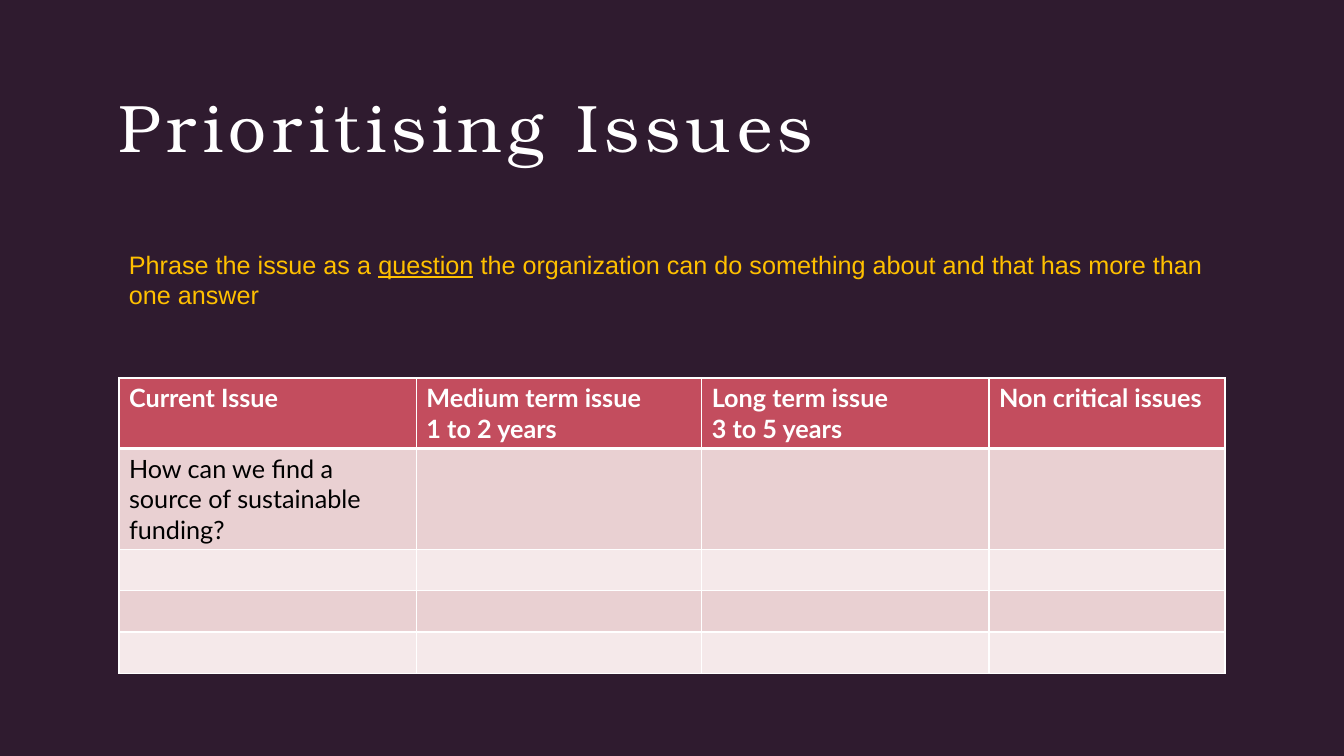
from dataclasses import dataclass

from lxml import etree
from pptx import Presentation
from pptx.dml.color import RGBColor
from pptx.enum.text import MSO_ANCHOR, MSO_AUTO_SIZE, PP_ALIGN
from pptx.oxml.ns import qn
from pptx.util import Inches, Pt

MIDDLE = MSO_ANCHOR.MIDDLE
LEFT_ALIGNED = PP_ALIGN.LEFT
NO_AUTOFIT = MSO_AUTO_SIZE.NONE
GROW = MSO_AUTO_SIZE.SHAPE_TO_FIT_TEXT


@dataclass(frozen=True)
class Theme:
    background: str = "2F1B2F"
    white: str = "FFFFFF"
    black: str = "000000"
    gold: str = "FFC000"
    header: str = "C34D5E"
    bands: tuple = ("E9D0D2", "F5E9EA")
    title_font: str = "TeX Gyre Bonum"
    prompt_font: str = "Arial"
    table_font: str = "Lato"
    title_size: int = 48
    text_size: int = 18


theme = Theme()


def add_text(para, text, *, font, size, color, bold=False, underline=False, spacing=0):
    """Add a formatted run to para; spacing is the letter spacing in points."""
    para.alignment = LEFT_ALIGNED
    span = para.add_run()
    span.text = text
    span.font.name = font
    span.font.size = Pt(size)
    span.font.color.rgb = RGBColor.from_string(color)
    span.font.bold = bold
    span.font.underline = underline
    if spacing:
        span.font._element.set("spc", str(spacing * 100))


def set_borders(cell, color, bottom_width):
    """Draw 1 pt borders round a cell, with its own width at the bottom."""
    properties = cell._tc.get_or_add_tcPr()
    widths = {"a:lnL": 1, "a:lnR": 1, "a:lnT": 1, "a:lnB": bottom_width}
    for position, (side, width) in enumerate(widths.items()):
        line = etree.Element(qn(side), w=str(Pt(width)))
        fill = etree.SubElement(line, qn("a:solidFill"))
        etree.SubElement(fill, qn("a:srgbClr"), val=color)
        properties.insert(position, line)


deck = Presentation()
deck.slide_width, deck.slide_height = Inches(13.33), Inches(7.5)
page = deck.slides.add_slide(deck.slide_layouts.get_by_name("Title Only"))
page.background.fill.solid()
page.background.fill.fore_color.rgb = RGBColor.from_string(theme.background)

left, width = Inches(1.18), Inches(10.97)

# Title
title = page.shapes.title
title.left, title.top, title.width, title.height = left, Inches(0.67), width, Inches(1.15)
frame = title.text_frame
frame.auto_size = NO_AUTOFIT
frame.vertical_anchor = MIDDLE
frame.margin_left = frame.margin_right = frame.margin_top = frame.margin_bottom = 0
add_text(frame.paragraphs[0], "Prioritising Issues", font=theme.title_font,
         size=theme.title_size, color=theme.white, spacing=4)

# Table of issues by time horizon
headings = [
    ["Current Issue"],
    ["Medium term issue", "1 to 2 years"],
    ["Long term issue", "3 to 5 years"],
    ["Non critical issues"],
]
first_issue = ["How can we find a source of sustainable funding?"]
column_widths = [2.95, 2.83, 2.85, 2.34]
row_heights = [0.7, 1.0, 0.41, 0.41, 0.41]
rows = [headings, [first_issue, [], [], []]] + [[[]] * 4] * 3

table = page.shapes.add_table(len(row_heights), len(column_widths), left, Inches(3.75),
                              width, Inches(sum(row_heights))).table
for column, column_width in zip(table.columns, column_widths):
    column.width = Inches(column_width)

for row_index, (row, row_height) in enumerate(zip(rows, row_heights)):
    is_header = row_index == 0
    table.rows[row_index].height = Inches(row_height)
    fill_color = theme.header if is_header else theme.bands[(row_index - 1) % 2]
    for column_index, lines in enumerate(row):
        cell = table.cell(row_index, column_index)
        cell.fill.solid()
        cell.fill.fore_color.rgb = RGBColor.from_string(fill_color)
        set_borders(cell, theme.white, bottom_width=3 if is_header else 1)
        for line_index, line in enumerate(lines):
            paragraphs = cell.text_frame
            para = paragraphs.add_paragraph() if line_index else paragraphs.paragraphs[0]
            add_text(para, line, font=theme.table_font, size=theme.text_size,
                     color=theme.white if is_header else theme.black, bold=is_header)

# Prompt above the table
prompt = page.shapes.add_textbox(left, Inches(2.42), width, Inches(0.71))
prompt.text_frame.word_wrap = True
prompt.text_frame.auto_size = GROW
for text, underline in [
    ("Phrase the issue as a ", False),
    ("question", True),
    (" the organization can do something about and that has more than one answer", False),
]:
    add_text(prompt.text_frame.paragraphs[0], text, font=theme.prompt_font,
             size=theme.text_size, color=theme.gold, underline=underline)

deck.save("out.pptx")
